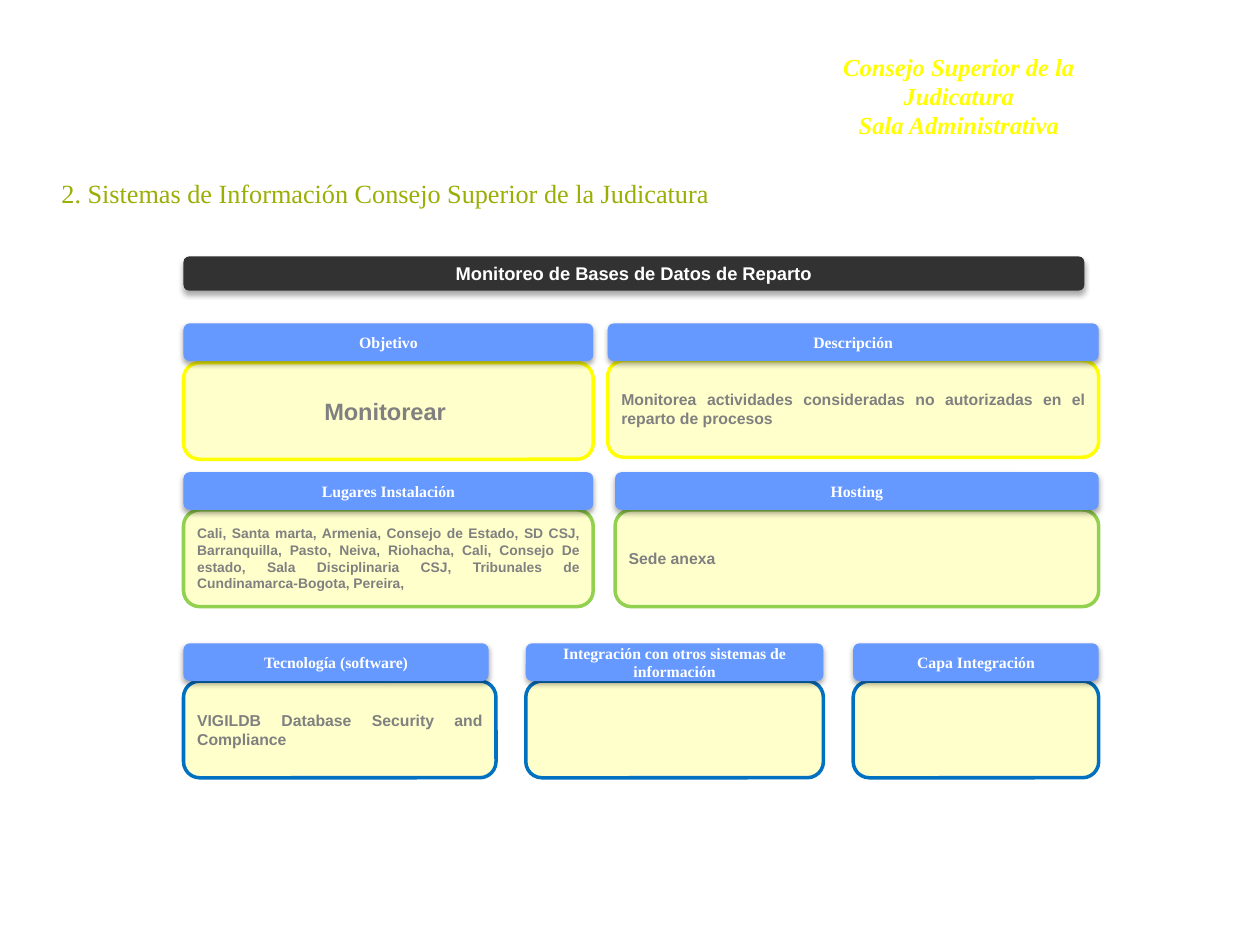
from lxml.etree import SubElement
from pptx import Presentation
from pptx.dml.color import RGBColor
from pptx.enum.shapes import MSO_SHAPE
from pptx.enum.text import MSO_ANCHOR, PP_ALIGN
from pptx.oxml.ns import qn
from pptx.util import Cm, Pt

YELLOW = RGBColor(0xFF, 0xFF, 0x00)
GREEN = RGBColor(0x92, 0xD0, 0x50)
BLUE = RGBColor(0x00, 0x70, 0xC0)
CREAM = RGBColor(0xFF, 0xFF, 0xCC)
SKY = RGBColor(0x66, 0x99, 0xFF)
DARK = RGBColor(0x32, 0x32, 0x32)
GRAY = RGBColor(0x80, 0x80, 0x80)
OLIVE = RGBColor(0x9A, 0xAE, 0x04)
WHITE = RGBColor(0xFF, 0xFF, 0xFF)
SANS, SERIF = "Arial", "Times New Roman"

LEFT, RIGHT = 3.7, 22.15
HEAD_H, BODY_H = 0.76, 1.95


def write(tf, text, *, size, font, color, bold=True, italic=False,
          align=PP_ALIGN.CENTER, anchor=MSO_ANCHOR.MIDDLE, inset=(0.18, 0.1)):
    """Fill a text frame, one paragraph per line of text."""
    tf.word_wrap = True
    tf.vertical_anchor = anchor
    tf.margin_left = tf.margin_right = Cm(inset[0])
    tf.margin_top = tf.margin_bottom = Cm(inset[1])
    for i, line in enumerate(text.split("\n")):
        p = tf.add_paragraph() if i else tf.paragraphs[0]
        p.alignment = align
        r = p.add_run()
        r.text = line
        r.font.name, r.font.size = font, Pt(size)
        r.font.bold, r.font.italic = bold, italic
        r.font.color.rgb = color


class SlideBuilder:
    """Holds the style and the current slide."""

    def __init__(self, prs):
        self.s = prs.slides.add_slide(prs.slide_layouts[5])

    def title(self, text, x, y, w, h):
        sp = self.s.shapes.title
        sp.left, sp.top, sp.width, sp.height = Cm(x), Cm(y), Cm(w), Cm(h)
        write(sp.text_frame, text, size=15, font=SERIF, color=OLIVE, bold=False)

    def letterhead(self, text, x, y, w, h):
        sp = self.s.shapes.add_textbox(Cm(x), Cm(y), Cm(w), Cm(h))
        write(sp.text_frame, text, size=14, font=SERIF, color=YELLOW, italic=True,
              anchor=MSO_ANCHOR.TOP, inset=(0.8, 0.13))

    def box(self, x, y, w, h, fill):
        sp = self.s.shapes.add_shape(
            MSO_SHAPE.ROUNDED_RECTANGLE, Cm(x), Cm(y), Cm(w), Cm(h))
        sp.shadow.inherit = False
        sp.fill.solid()
        sp.fill.fore_color.rgb = fill
        return sp

    def bar(self, text, x, y, w, h, fill=SKY, size=9, font=SERIF):
        sp = self.box(x, y, w, h, fill)
        sp.line.fill.background()
        # Soft shadow below the bar
        effects = sp._element.spPr.find(qn("a:effectLst"))
        shadow = SubElement(effects, qn("a:outerShdw"), blurRad="40000",
                            dist="23000", dir="5400000", rotWithShape="0")
        color = SubElement(shadow, qn("a:srgbClr"), val="000000")
        SubElement(color, qn("a:alpha"), val="35000")
        write(sp.text_frame, text, size=size, font=font, color=WHITE)

    def panel(self, text, x, y, w, border, size=9, align=PP_ALIGN.JUSTIFY):
        sp = self.box(x, y, w, BODY_H, CREAM)
        sp.line.color.rgb = border
        sp.line.width = Pt(2)
        if text:
            write(sp.text_frame, text, size=size, font=SANS, color=GRAY, align=align)

    def card(self, heading, text, x, y, w, border, extra=0, drop=HEAD_H, **fmt):
        """Panel with a heading bar; extra widens the panel past the bar."""
        self.panel(text, x, y + drop, w + extra, border, **fmt)
        self.bar(heading, x, y, w, HEAD_H)


def main():
    prs = Presentation()
    prs.slide_width, prs.slide_height = Cm(25.4), Cm(19.05)
    b = SlideBuilder(prs)

    # Letterhead, title and system name
    b.letterhead("Consejo Superior de la Judicatura\nSala Administrativa",
                 15.57, 0.91, 7.52, 2.03)
    b.title("2. Sistemas de Información Consejo Superior de la Judicatura",
            0, 3.23, 15.54, 1.32)
    b.bar("Monitoreo de Bases de Datos de Reparto", LEFT, 5.17, 18.16, 0.69,
          fill=DARK, size=10.5, font=SANS)

    # Purpose and description
    y, x = 6.52, 12.25
    b.card("Objetivo", "Monitorear ", LEFT, y, 8.26, YELLOW, drop=0.79,
           size=13.5, align=PP_ALIGN.CENTER)
    b.card("Descripción",
           "Monitorea actividades consideradas no autorizadas en el reparto de procesos",
           x, y, RIGHT - x, YELLOW, drop=0.75)

    # Places and hosting
    y, x = 9.52, 12.4
    b.card("Lugares Instalación",
           "Cali, Santa marta, Armenia, Consejo de Estado, SD CSJ, Barranquilla, "
           "Pasto, Neiva, Riohacha, Cali, Consejo De estado, Sala Disciplinaria CSJ, "
           "Tribunales de Cundinamarca-Bogota, Pereira, ",
           LEFT, y, 8.26, GREEN, size=7.9)
    b.card("Hosting", "Sede anexa", x, y, RIGHT - x, GREEN)

    # Technology and integration
    y, x = 12.97, 17.2
    b.card("Tecnología (software)", "VIGILDB Database Security and Compliance",
           LEFT, y, 6.15, BLUE, extra=0.15)
    b.card("Integración con otros sistemas de información", "", 10.6, y, 6, BLUE)
    b.card("Capa Integración", "", x, y, RIGHT - x, BLUE)

    prs.save("out.pptx")


if __name__ == "__main__":
    main()
